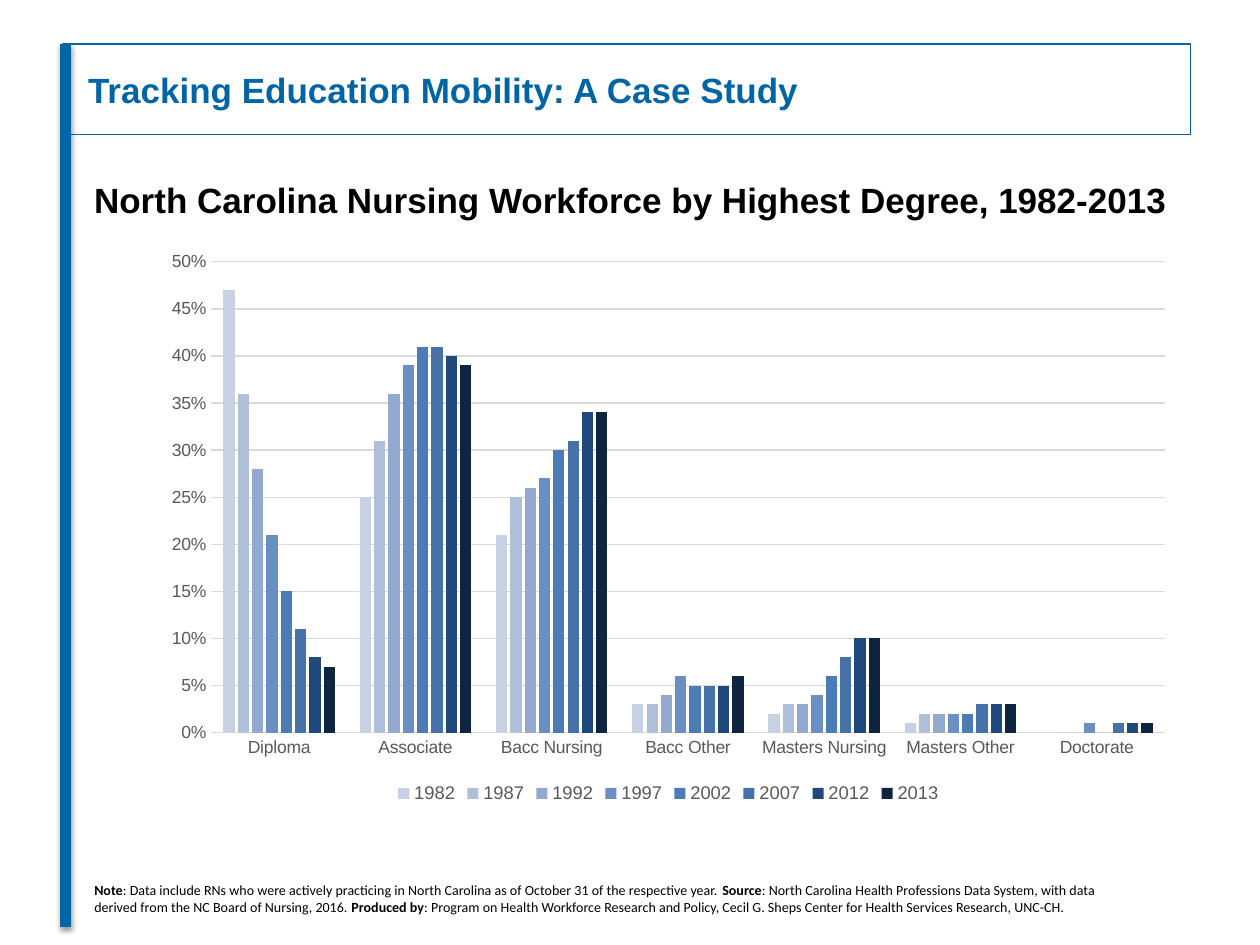
import pptx
import pptx.chart.data
import pptx.dml.color
import pptx.enum.chart
import pptx.enum.shapes
import pptx.enum.text
import pptx.oxml
import pptx.oxml.ns
import pptx.util
from pptx.util import Inches

COLORS = {"brand": "0065A4", "text": "000000", "axis": "595959", "grid": "D9D9D9"}

DEGREES = ["Diploma", "Associate", "Bacc Nursing", "Bacc Other",
           "Masters Nursing", "Masters Other", "Doctorate"]
# Year: (bar colour, share of the workforce by degree)
SHARES = {
    "1982": ("C8D1E4", (0.47, 0.25, 0.21, 0.03, 0.02, 0.01, 0)),
    "1987": ("AFBED9", (0.36, 0.31, 0.25, 0.03, 0.03, 0.02, 0)),
    "1992": ("93A9CF", (0.28, 0.36, 0.26, 0.04, 0.03, 0.02, 0)),
    "1997": ("6A8FC3", (0.21, 0.39, 0.27, 0.06, 0.04, 0.02, 0.01)),
    "2002": ("4C7CB6", (0.15, 0.41, 0.3, 0.05, 0.06, 0.02, 0)),
    "2007": ("4672A8", (0.11, 0.41, 0.31, 0.05, 0.08, 0.03, 0.01)),
    "2012": ("1F497D", (0.08, 0.4, 0.34, 0.05, 0.1, 0.03, 0.01)),
    "2013": ("0F243E", (0.07, 0.39, 0.34, 0.06, 0.1, 0.03, 0.01)),
}

# (text, bold)
NOTE = [
    ("Note", True),
    (": Data include RNs who were actively practicing in North Carolina "
     "as of October 31 of the respective year. ", False),
    ("Source", True),
    (": North Carolina Health Professions Data System, with data \n"
     "derived from the NC Board of Nursing, 2016. ", False),
    ("Produced by", True),
    (": Program on Health Workforce Research and Policy, Cecil G. Sheps Center "
     "for Health Services Research, UNC-CH.", False),
]


def rgb(name):
    return pptx.dml.color.RGBColor.from_string(COLORS.get(name, name))


def style_font(font, size, color, name="Arial", bold=False):
    font.size = pptx.util.Pt(size)
    font.color.rgb = rgb(color)
    font.name = name
    font.bold = bold


def style_line(line, color, width):
    line.color.rgb = rgb(color)
    line.width = pptx.util.Pt(width)


def add_text(slide, box, parts, size, color="text", font="Arial",
             align="LEFT", anchor="TOP"):
    """Place one paragraph made of (text, bold) parts; newlines break lines."""
    frame = slide.shapes.add_textbox(*map(Inches, box)).text_frame
    frame.word_wrap = True
    frame.vertical_anchor = pptx.enum.text.MSO_ANCHOR[anchor]
    paragraph = frame.paragraphs[0]
    paragraph.alignment = pptx.enum.text.PP_ALIGN[align]
    for text, bold in parts:
        for index, piece in enumerate(text.split("\n")):
            if index:
                paragraph.add_line_break()
            run = paragraph.add_run()
            run.text = piece
            style_font(run.font, size, color, font, bold)


def add_header(slide, box, title):
    left, top, width, height = box
    frame = slide.shapes.add_shape(
        pptx.enum.shapes.MSO_SHAPE.RECTANGLE, *map(Inches, box))
    frame.shadow.inherit = False
    frame.fill.background()
    style_line(frame.line, "brand", 0.75)

    # Thick side rule with a soft shadow
    x = Inches(left + 0.02)
    rule = slide.shapes.add_connector(
        pptx.enum.shapes.MSO_CONNECTOR.STRAIGHT, x, Inches(top), x, Inches(top + 7.01))
    style_line(rule.line, "brand", 6)
    rule._element.spPr.append(pptx.oxml.parse_xml(
        f'<a:effectLst {pptx.oxml.ns.nsdecls("a")}>'
        '<a:outerShdw blurRad="40000" dist="20000" dir="5400000" rotWithShape="0">'
        '<a:srgbClr val="000000"><a:alpha val="38000"/></a:srgbClr>'
        '</a:outerShdw></a:effectLst>'))

    add_text(slide, (left + 0.1, top, width - 0.27, height), [(title, True)], 20,
             color="brand", anchor="MIDDLE")


def add_degree_chart(slide, box):
    data = pptx.chart.data.CategoryChartData(number_format="0%")
    data.categories = DEGREES
    for year, (_, shares) in SHARES.items():
        data.add_series(year, shares)
    chart = slide.shapes.add_chart(
        pptx.enum.chart.XL_CHART_TYPE.COLUMN_CLUSTERED, *map(Inches, box), data).chart
    chart.has_title = False
    style_font(chart.font, 10, "text")

    # Bars
    plot = chart.plots[0]
    plot.vary_by_categories = False
    plot.gap_width = 219
    plot.overlap = -27
    for series, (color, _) in zip(plot.series, SHARES.values()):
        series.format.fill.solid()
        series.format.fill.fore_color.rgb = rgb(color)
        series.invert_if_negative = False

    # Axes
    degree_axis, share_axis = chart.category_axis, chart.value_axis
    for axis in (degree_axis, share_axis):
        axis.major_tick_mark = pptx.enum.chart.XL_TICK_MARK.NONE
        axis.minor_tick_mark = pptx.enum.chart.XL_TICK_MARK.NONE
        style_font(axis.tick_labels.font, 10, "axis")
    style_line(degree_axis.format.line, "grid", 0.75)
    share_axis.format.line.fill.background()
    share_axis.minimum_scale = 0
    share_axis.maximum_scale = 0.5
    share_axis.major_unit = 0.05
    share_axis.tick_labels.number_format = "0%"
    share_axis.tick_labels.number_format_is_linked = False
    share_axis.has_major_gridlines = True
    style_line(share_axis.major_gridlines.format.line, "grid", 0.75)

    # Legend
    chart.has_legend = True
    chart.legend.position = pptx.enum.chart.XL_LEGEND_POSITION.BOTTOM
    chart.legend.include_in_layout = False
    style_font(chart.legend.font, 10.5, "axis")


def main():
    deck = pptx.Presentation()
    deck.slide_width, deck.slide_height = Inches(10), Inches(7.5)
    slide = deck.slides.add_slide(deck.slide_layouts[6])

    add_header(slide, (0.5, 0.35, 8.95, 0.72), "Tracking Education Mobility: A Case Study")
    add_text(slide, (0.6, 1.37, 8.81, 0.44),
             [("North Carolina Nursing Workforce by Highest Degree, 1982-2013", True)],
             20, align="CENTER")
    add_degree_chart(slide, (1.2, 1.91, 8.21, 4.51))
    add_text(slide, (0.65, 6.95, 8.64, 0.37), NOTE, 8, font="Calibri")

    deck.save("out.pptx")


if __name__ == "__main__":
    main()
